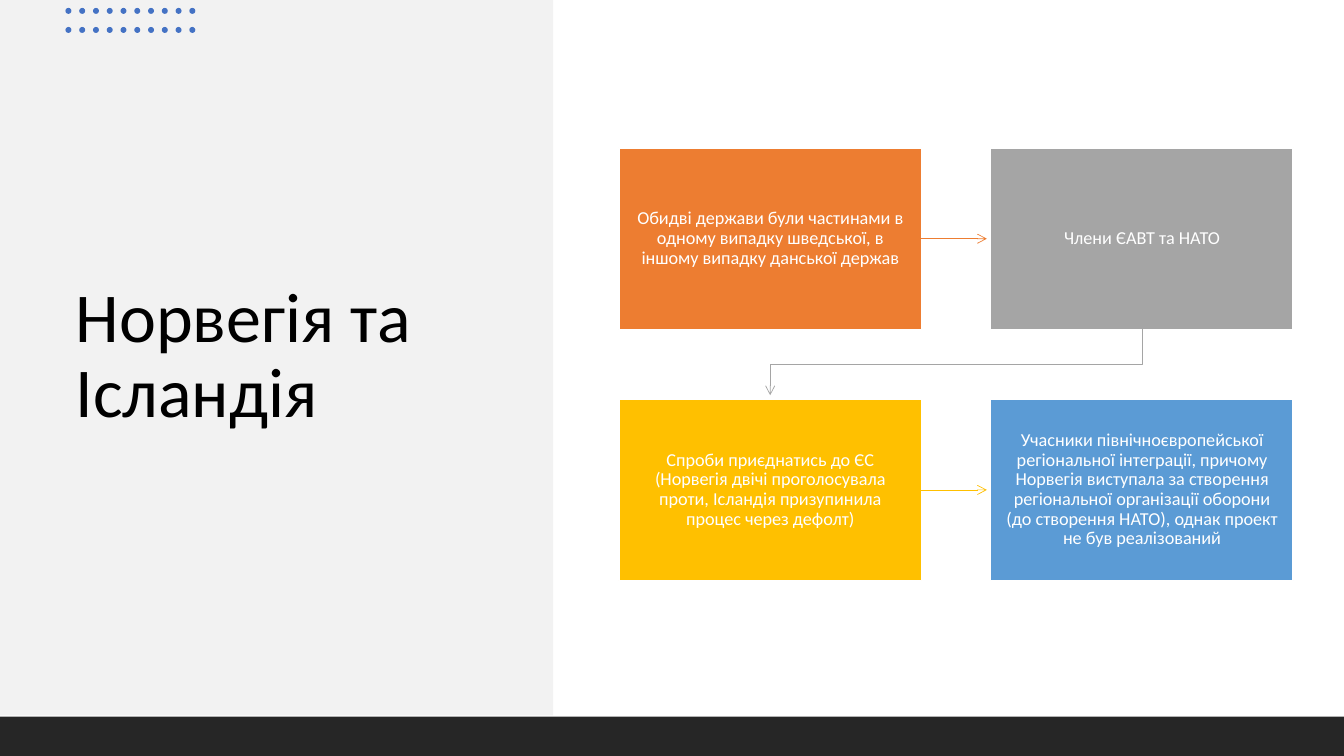
from lxml.etree import SubElement
from pptx import Presentation
from pptx.dml.color import RGBColor
from pptx.enum.shapes import MSO_CONNECTOR as CONN, MSO_SHAPE as SHAPE
from pptx.enum.text import MSO_ANCHOR as ANCHOR, MSO_AUTO_SIZE as AUTO, PP_ALIGN as ALIGN
from pptx.oxml.ns import qn
from pptx.util import Cm, Pt

BLACK = RGBColor(0x00, 0x00, 0x00)
WHITE = RGBColor(0xFF, 0xFF, 0xFF)
PALE = RGBColor(0xF2, 0xF2, 0xF2)
DARK = RGBColor(0x26, 0x26, 0x26)
BLUE = RGBColor(0x44, 0x72, 0xC4)
ORANGE = RGBColor(0xED, 0x7D, 0x31)
GRAY = RGBColor(0xA5, 0xA5, 0xA5)
GOLD = RGBColor(0xFF, 0xC0, 0x00)
SKY = RGBColor(0x5B, 0x9B, 0xD5)

FONT = "Calibri"
BOX_W, BOX_H = Cm(7.62), Cm(4.57)
BOX_LEFT, BOX_TOP = Cm(15.6), Cm(3.73)
STEP_X, STEP_Y = Cm(9.37), Cm(6.33)
TIP_GAP = Cm(0.1)

STEPS = [
    ("Обидві держави були частинами в одному випадку шведської, "
     "в іншому випадку данської держав", ORANGE),
    ("Члени ЄАВТ та НАТО", GRAY),
    ("Спроби приєднатись до ЄС (Норвегія двічі проголосувала проти, "
     "Ісландія призупинила процес через дефолт)", GOLD),
    ("Учасники північноєвропейської регіональної інтеграції, причому "
     "Норвегія виступала за створення регіональної організації оборони "
     "(до створення НАТО), однак проект не був реалізований", SKY),
]


def add_plain(shapes, kind, left, top, width, height, color):
    """Add a filled shape without outline or shadow."""
    sp = shapes.add_shape(kind, left, top, width, height)
    sp.shadow.inherit = False
    sp.fill.solid()
    sp.fill.fore_color.rgb = color
    sp.line.fill.background()
    return sp


def write(tf, text, size, color, align):
    """Write one formatted paragraph, centred vertically."""
    tf.word_wrap = True
    tf.auto_size = AUTO.NONE
    tf.vertical_anchor = ANCHOR.MIDDLE
    tf.text = text
    p = tf.paragraphs[0]
    p.alignment = align
    p.line_spacing = 0.9
    font = p.runs[0].font
    font.name, font.size = FONT, Pt(size)
    font.color.rgb = color


def add_title(s, text):
    """Place and format the title placeholder."""
    sp = s.shapes.title
    sp.left, sp.top, sp.width, sp.height = Cm(1.65), Cm(3.35), Cm(10.77), Cm(11.3)
    write(sp.text_frame, text, 50, BLACK, ALIGN.LEFT)


def add_backdrop(s):
    """Add the side panel behind the title and the bottom bar."""
    panel = add_plain(s.shapes, SHAPE.RECTANGLE, 0, 0, Cm(13.94), Cm(18.03), PALE)
    panel.element.getparent().insert(2, panel.element)
    add_plain(s.shapes, SHAPE.RECTANGLE, 0, Cm(18.06), Cm(33.87), Cm(0.99), DARK)


def add_dots(s):
    """Add the grouped grid of dots."""
    group = s.shapes.add_group_shape()
    for row in range(2):
        for col in range(10):
            add_plain(group.shapes, SHAPE.OVAL, Cm(1.65 + 0.347 * col),
                      Cm(0.2 + 0.48 * row), Cm(0.15), Cm(0.15), BLUE)


def add_step(s, i, text, color):
    """Add one box of the two-by-two flow."""
    row, col = divmod(i, 2)
    sp = add_plain(s.shapes, SHAPE.RECTANGLE, BOX_LEFT + col * STEP_X,
                   BOX_TOP + row * STEP_Y, BOX_W, BOX_H, color)
    sp.line.color.rgb = WHITE
    sp.line.width = Pt(1)
    tf = sp.text_frame
    tf.margin_left = tf.margin_right = tf.margin_top = tf.margin_bottom = Cm(0.38)
    write(tf, text, 13, WHITE, ALIGN.CENTER)
    return sp


def style_arrow(sp, color):
    """Give a line its colour, width and open arrowhead."""
    sp.line.color.rgb = color
    sp.line.width = Pt(0.5)
    ln = sp.element.spPr.find(qn("a:ln"))
    SubElement(ln, qn("a:tailEnd"), type="arrow")


def add_across(s, box, color):
    """Add an arrow from a box towards its right neighbour."""
    y = box.top + box.height // 2
    right = box.left + box.width
    cxn = s.shapes.add_connector(CONN.STRAIGHT, right, y,
                                 box.left + STEP_X - TIP_GAP, y)
    cxn.begin_connect(box, 3)
    style_arrow(cxn, color)
    SubElement(cxn.element.spPr, qn("a:effectLst"))


def add_return(s, start, end, color):
    """Add the bent arrow from the upper row to the lower one."""
    x1, x2 = (box.left + box.width // 2 for box in (start, end))
    y1 = start.top + start.height
    middle = (y1 + end.top) // 2
    builder = s.shapes.build_freeform(x1, y1)
    builder.add_line_segments(
        [(x1, middle), (x2, middle), (x2, end.top - TIP_GAP)], close=False)
    sp = builder.convert_to_shape()
    sp.shadow.inherit = False
    sp.fill.background()
    style_arrow(sp, color)


def main():
    """Build and save the slide."""
    prs = Presentation()
    prs.slide_width, prs.slide_height = Cm(33.87), Cm(19.05)
    s = prs.slides.add_slide(prs.slide_layouts[5])
    add_title(s, "Норвегія та Ісландія")
    add_backdrop(s)
    add_dots(s)
    boxes = [add_step(s, i, text, color) for i, (text, color) in enumerate(STEPS)]
    add_across(s, boxes[0], ORANGE)
    add_return(s, boxes[1], boxes[2], GRAY)
    add_across(s, boxes[2], GOLD)
    prs.save("out.pptx")


if __name__ == "__main__":
    main()
